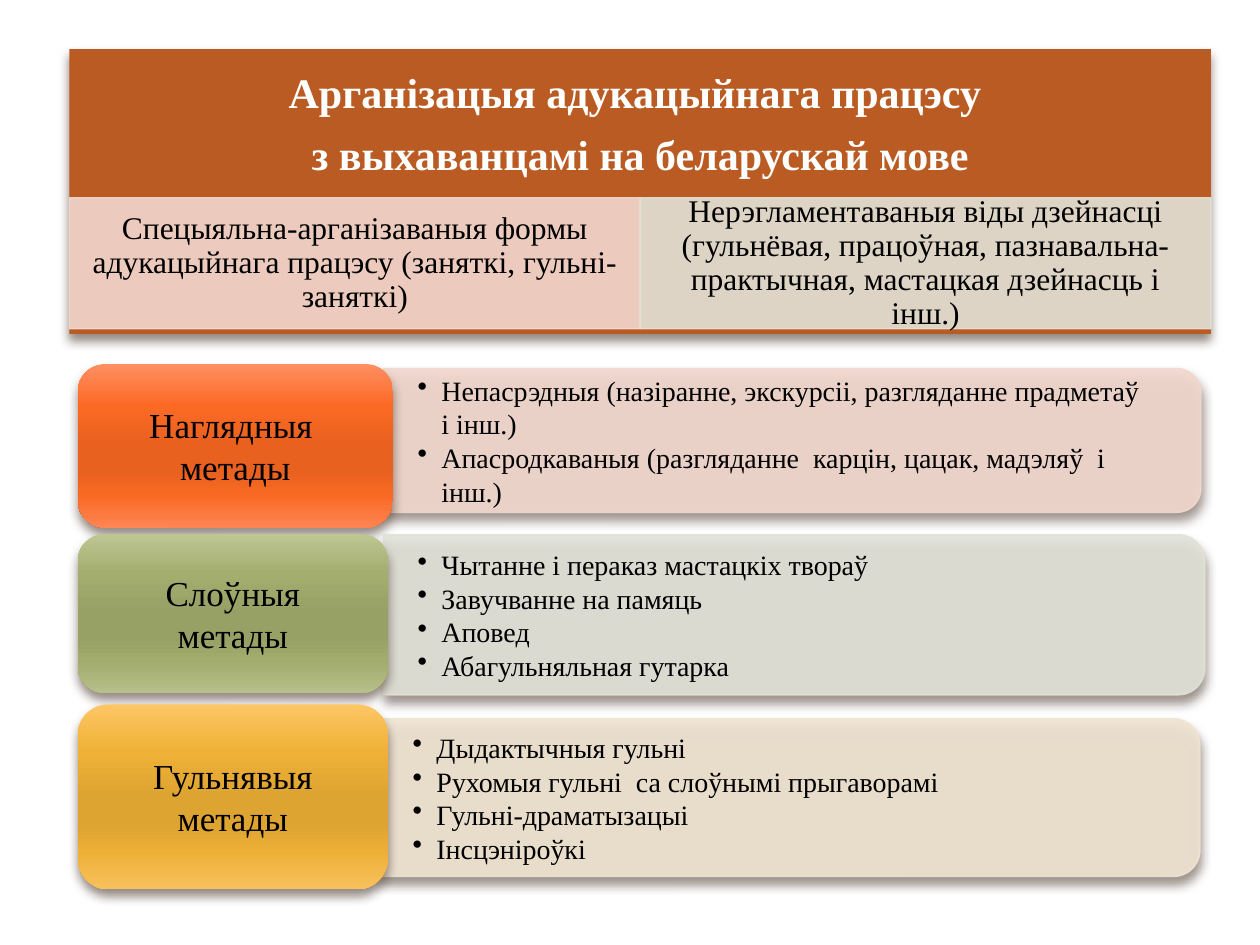
from dataclasses import dataclass

import pptx
import pptx.util
from lxml import etree
from pptx.dml.color import RGBColor
from pptx.enum.shapes import MSO_SHAPE
from pptx.enum.text import MSO_ANCHOR, PP_ALIGN
from pptx.oxml.ns import qn
from pptx.util import Cm, Pt

FONT = "Times New Roman"
BLACK = RGBColor(0x00, 0x00, 0x00)
WHITE = RGBColor(0xFF, 0xFF, 0xFF)
RUST = RGBColor(0xB9, 0x5B, 0x22)
PINK = RGBColor(0xF2, 0xD8, 0xCF)
GREY = RGBColor(0xE1, 0xE2, 0xD8)
SAND = RGBColor(0xF0, 0xE4, 0xD2)
SHADOW = RGBColor(0x4E, 0x3B, 0x30)


def shades(*codes: str) -> tuple[RGBColor, ...]:
    return tuple(RGBColor.from_string(c) for c in codes)


STOPS = (0, 25, 50, 65, 80, 100)
ORANGES = shades("FF8F62", "FB6A25", "E9611F", "E9611F", "F96924", "FF8554")
GREENS = shades("BEC692", "A3AD6E", "97A065", "97A065", "A2AC6D", "B7BF8B")
YELLOWS = shades("FEC766", "EFB137", "DEA431", "DEA431", "EDB037", "F8C15E")


@dataclass
class Box:
    """Left, top, width and height in centimetres."""
    x: float
    y: float
    w: float
    h: float


@dataclass
class Method:
    label: tuple[str, str]
    label_box: Box
    gradient: tuple[RGBColor, ...]
    items: tuple[str, ...]
    panel_box: Box
    tint: RGBColor


METHODS = (
    Method(("Наглядныя ", "метады"), Box(1.57, 7.34, 6.35, 3.3), ORANGES,
           ("Непасрэдныя (назiранне, экскурсii, разгляданне прадметаў  i iнш.)",
            "Апасродкаваныя (разгляданне  карцiн, цацак, мадэляў  i iнш.)"),
           Box(7.73, 7.43, 16.48, 2.9), PINK),
    Method(("Слоўныя", "метады"), Box(1.57, 10.77, 6.25, 3.2), GREENS,
           ("Чытанне і пераказ мастацкіх твораў", "Завучванне на памяць",
            "Аповед", "Абагульняльная гутарка"),
           Box(7.73, 10.78, 16.56, 3.23), GREY),
    Method(("Гульнявыя", "метады"), Box(1.57, 14.2, 6.25, 3.73), YELLOWS,
           ("Дыдактычныя гульнi", "Рухомыя гульнi  са слоўнымі прыгаворамi",
            "Гульнi-драматызацыi", "Iнсцэнiроўкi"),
           Box(7.63, 14.49, 16.56, 3.18), SAND),
)

HEADER = Box(1.4, 0.99, 23.01, 5.74)
TITLE_H, CELL_Y, CELL_H = 3.1, 3.99, 2.64
TITLE = ("Арганізацыя адукацыйнага працэсу ", "з выхаванцамі на беларускай мове")
FORMS = (
    ("Спецыяльна-арганiзаваныя формы адукацыйнага працэсу "
     "(заняткі, гульні-заняткі)", PINK),
    ("Нерэгламентаваныя віды дзейнасці (гульнёвая, працоўная, пазнавальна- "
     "практычная, мастацкая дзейнасць i iнш.)", GREY),
)


def add_alpha(parent, percent: int) -> None:
    for clr in parent.iter(qn("a:srgbClr")):
        etree.SubElement(clr, qn("a:alpha"), val=str(percent * 1000))


def add_shape(s, kind: MSO_SHAPE, b: Box):
    sp = s.shapes.add_shape(kind, Cm(b.x), Cm(b.y), Cm(b.w), Cm(b.h))
    sp.shadow.inherit = False
    sp.line.fill.background()
    return sp


def add_shadow(sp) -> None:
    effects = sp._element.spPr.find(qn("a:effectLst"))
    shadow = etree.SubElement(effects, qn("a:outerShdw"), blurRad=str(Pt(6)),
                              dist=str(Pt(4)), dir="5400000", rotWithShape="0")
    etree.SubElement(shadow, qn("a:srgbClr"), val=str(SHADOW))
    add_alpha(shadow, 60)


def fill_tint(sp, color: RGBColor) -> None:
    sp.fill.solid()
    sp.fill.fore_color.rgb = color
    sp.line.color.rgb = color
    sp.line.width = Pt(0.79)
    for tag in ("a:solidFill", "a:ln"):
        add_alpha(sp._element.spPr.find(qn(tag)), 90)


def fill_gradient(sp, colors: tuple[RGBColor, ...]) -> None:
    sp.fill.gradient()
    sp.fill.gradient_angle = 270
    stops = next(sp._element.spPr.iter(qn("a:gsLst")))
    for old in list(stops):
        stops.remove(old)
    for pos, color in zip(STOPS, colors):
        gs = etree.SubElement(stops, qn("a:gs"), pos=str(pos * 1000))
        etree.SubElement(gs, qn("a:srgbClr"), val=str(color))


def write(sp, lines: tuple[str, ...], size: int, inset: tuple[float, float],
          color: RGBColor = BLACK, bold: bool = False, bullets: bool = False,
          spacing: float = 1.0, gap: float = 0) -> None:
    tf = sp.text_frame
    tf.word_wrap = True
    tf.vertical_anchor = MSO_ANCHOR.MIDDLE
    tf.margin_left = tf.margin_right = Cm(inset[0])
    tf.margin_top = tf.margin_bottom = Cm(inset[1])
    for i, line in enumerate(lines):
        p = tf.add_paragraph() if i else tf.paragraphs[0]
        p.alignment = PP_ALIGN.LEFT if bullets else PP_ALIGN.CENTER
        p.line_spacing = spacing
        if i:
            p.space_before = Pt(gap)
        if bullets:
            pPr = p._p.get_or_add_pPr()
            pPr.set("marL", str(Cm(0.48)))
            pPr.set("indent", str(-Cm(0.48)))
            etree.SubElement(pPr, qn("a:buChar"), char="•")
        r = p.add_run()
        r.text = line
        r.font.name = FONT
        r.font.size = Pt(size)
        r.font.bold = bold
        r.font.color.rgb = color


def add_text(s, b: Box, lines: tuple[str, ...], *args, **kwargs) -> None:
    sp = s.shapes.add_textbox(Cm(b.x), Cm(b.y), Cm(b.w), Cm(b.h))
    write(sp, lines, *args, **kwargs)


def draw_header(s) -> None:
    sp = add_shape(s, MSO_SHAPE.RECTANGLE, HEADER)
    sp.fill.solid()
    sp.fill.fore_color.rgb = RUST
    add_shadow(sp)
    add_text(s, Box(HEADER.x, HEADER.y, HEADER.w, TITLE_H), TITLE, 24,
             (0.4, 0.4), color=WHITE, bold=True, spacing=0.9, gap=9.5)
    # Two cells side by side under the title
    w = HEADER.w / len(FORMS)
    for i, (text, tint) in enumerate(FORMS):
        cell = add_shape(s, MSO_SHAPE.RECTANGLE,
                         Box(HEADER.x + i * w, CELL_Y, w, CELL_H))
        fill_tint(cell, tint)
        write(cell, (text,), 18, (0.36, 0.08), spacing=0.9)


def draw_method(s, m: Method) -> None:
    # Panel: a shape with two round corners, turned to face right
    b = m.panel_box
    upright = Box(b.x + (b.w - b.h) / 2, b.y + (b.h - b.w) / 2, b.h, b.w)
    panel = add_shape(s, MSO_SHAPE.ROUND_2_SAME_RECTANGLE, upright)
    panel.rotation = 90
    fill_tint(panel, m.tint)
    add_shadow(panel)
    add_text(s, Box(b.x, b.y, b.w - 0.15, b.h), m.items, 16, (0.69, 0.36),
             bullets=True)
    # Label
    label = add_shape(s, MSO_SHAPE.ROUNDED_RECTANGLE, m.label_box)
    fill_gradient(label, m.gradient)
    add_shadow(label)
    write(label, m.label, 20, (0.2, 0.1))


def main() -> None:
    prs = pptx.Presentation()
    prs.slide_width, prs.slide_height = Cm(25.4), Cm(19.05)
    s = prs.slides.add_slide(prs.slide_layouts[6])
    draw_header(s)
    for m in METHODS:
        draw_method(s, m)
    prs.save("out.pptx")


if __name__ == "__main__":
    main()
